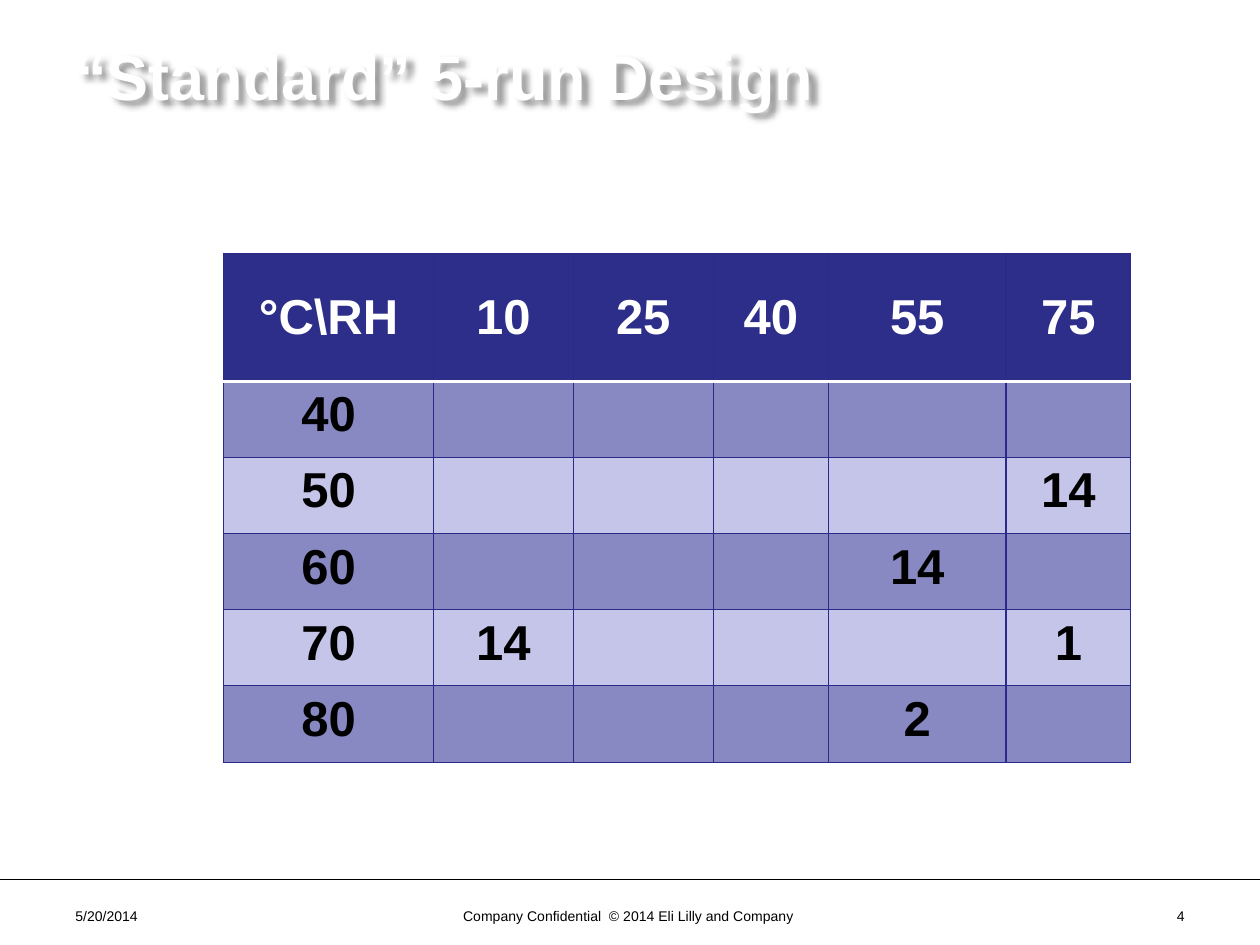
import pptx
import pptx.dml.color
import pptx.enum.text
import pptx.enum.shapes
import pptx.oxml
import pptx.oxml.ns
import pptx.util

INK, WHITE, NAVY, EDGE = "000000", "FFFFFF", "2D2D8A", "2A2A89"
BANDS = ("8888C2", "C5C5E9")
ALIGN = pptx.enum.text.PP_ALIGN
ANCHOR = pptx.enum.text.MSO_ANCHOR

HEADER = ["°C\\RH", "10", "25", "40", "55", "75"]
TEMPERATURES = ["40", "50", "60", "70", "80"]
RUNS = {("50", "75"): "14", ("60", "55"): "14", ("70", "10"): "14",
        ("70", "75"): "1", ("80", "55"): "2"}
COLUMN_WIDTHS = [16.65, 11.1, 11.1, 9.15, 14.1, 9.9]
ROW_HEIGHTS = [10.15] + [6.05] * len(TEMPERATURES)


def color(value):
    return pptx.dml.color.RGBColor.from_string(value)


def element(xml):
    return pptx.oxml.parse_xml(xml.replace(">", f" {pptx.oxml.ns.nsdecls('a')}>", 1))


class Slide:
    """Draw styled elements on a page with a grid of 100 columns by 75 rows."""

    font = "Arial"

    def __init__(self, deck):
        self.page = deck.slides.add_slide(deck.slide_layouts[6])
        self.unit = deck.slide_width / 100

    def grid(self, *lengths):
        return [pptx.util.Emu(round(length * self.unit)) for length in lengths]

    def fill_text(self, frame, words, size, ink, bold=False, align=ALIGN.LEFT):
        para = frame.paragraphs[0]
        para.text = words
        para.alignment = align
        para.font.name = self.font
        para.font.size = pptx.util.Pt(size)
        para.font.bold = bold
        para.font.color.rgb = color(ink)

    def text(self, area, words, size, ink, bold=False, align=ALIGN.LEFT, anchor=ANCHOR.TOP):
        box = self.page.shapes.add_textbox(*self.grid(*area))
        box.text_frame.word_wrap = True
        box.text_frame.vertical_anchor = anchor
        self.fill_text(box.text_frame, words, size, ink, bold, align)
        return box

    def title(self, area, words):
        box = self.text(area, words, 36, WHITE, True, anchor=ANCHOR.MIDDLE)
        box._element.spPr.append(element(
            '<a:effectLst><a:outerShdw blurRad="38100" dist="50800" dir="2700000" algn="tl">'
            '<a:srgbClr val="000000"><a:alpha val="40000"/></a:srgbClr>'
            '</a:outerShdw></a:effectLst>'))

    def rule(self, *ends):
        line = self.page.shapes.add_connector(
            pptx.enum.shapes.MSO_CONNECTOR.STRAIGHT, *self.grid(*ends))
        line.line.color.rgb = color(INK)
        line.line.width = pptx.util.Pt(0.5)
        line._element.spPr.append(element("<a:effectLst></a:effectLst>"))

    def borders(self, cell, top, bottom):
        sides = {"L": (EDGE, 0.75), "R": (EDGE, 0.75), "T": top, "B": bottom}
        properties = cell._tc.get_or_add_tcPr()
        for index, (side, (ink, width)) in enumerate(sides.items()):
            properties.insert(index, element(
                f'<a:ln{side} w="{int(pptx.util.Pt(width))}"><a:solidFill>'
                f'<a:srgbClr val="{ink}"/></a:solidFill></a:ln{side}>'))

    def table(self, left, top, widths, heights, rows):
        area = self.grid(left, top, sum(widths), sum(heights))
        table = self.page.shapes.add_table(len(rows), len(widths), *area).table
        for column, width in zip(table.columns, self.grid(*widths)):
            column.width = width
        for row, height in zip(table.rows, self.grid(*heights)):
            row.height = height
        thin, thick = (EDGE, 0.75), (WHITE, 2)
        for r, row in enumerate(rows):
            head = r == 0
            for c, words in enumerate(row):
                cell = table.cell(r, c)
                cell.fill.solid()
                cell.fill.fore_color.rgb = color(NAVY if head else BANDS[(r - 1) % 2])
                cell.vertical_anchor = ANCHOR.MIDDLE if head else ANCHOR.TOP
                self.borders(cell, thick if r == 1 else thin, thick if head else thin)
                self.fill_text(cell.text_frame, words, 28, WHITE if head else INK,
                               True, ALIGN.CENTER)


def main():
    deck = pptx.Presentation()
    deck.slide_width = pptx.util.Inches(10)
    deck.slide_height = pptx.util.Inches(7.5)
    slide = Slide(deck)
    slide.rule(0, 69.8, 100, 69.8)
    slide.title((5, -0.3, 90, 12.5), "“Standard” 5-run Design")
    footers = [(5, 23.3, "5/20/2014", ALIGN.LEFT),
               (34.2, 31.7, "Company Confidential  © 2014 Eli Lilly and Company ", ALIGN.CENTER),
               (71.7, 23.3, "4", ALIGN.RIGHT)]
    for left, width, words, align in footers:
        slide.text((left, 71.5, width, 2.5), words, 8, INK, align=align)
    body = [[degree] + [RUNS.get((degree, humidity), "") for humidity in HEADER[1:]]
            for degree in TEMPERATURES]
    slide.table(17.75, 20.1, COLUMN_WIDTHS, ROW_HEIGHTS, [HEADER] + body)
    deck.save("out.pptx")


if __name__ == "__main__":
    main()
